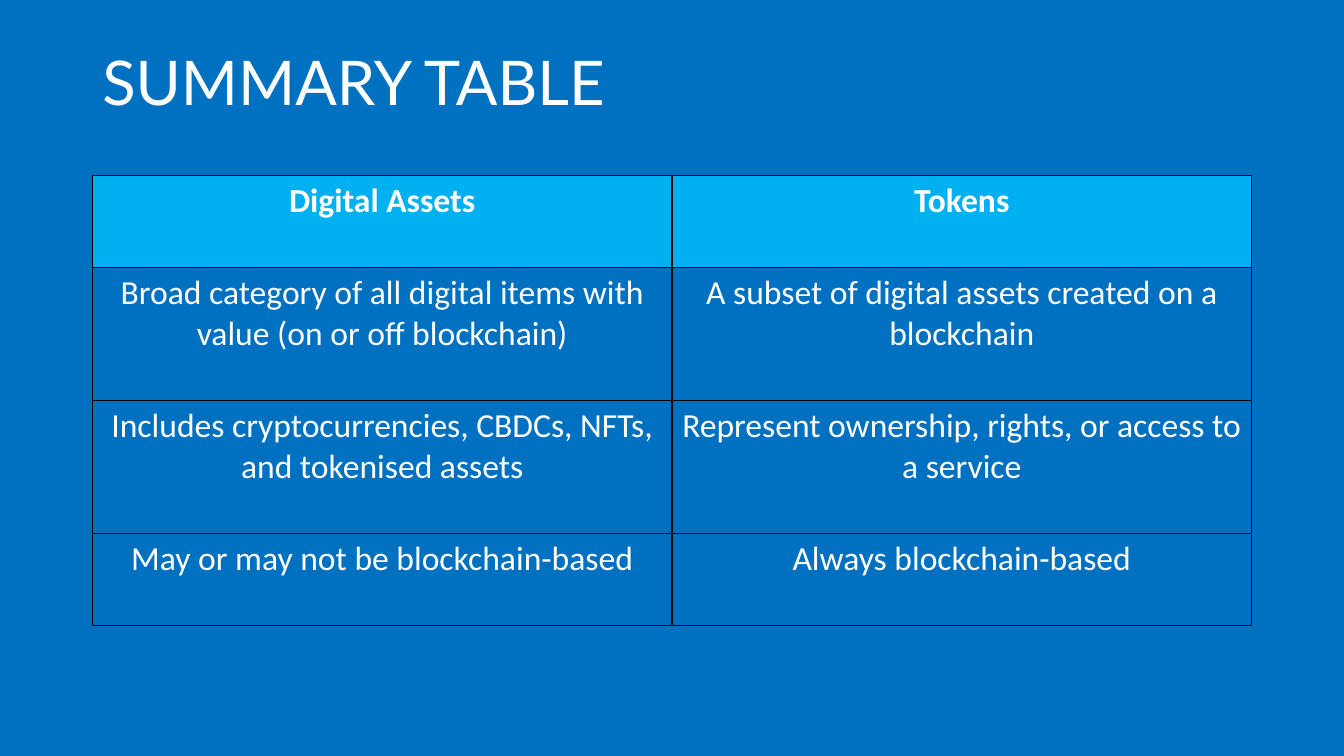
import pptx
import pptx.dml.color
import pptx.enum.text
import pptx.oxml
import pptx.oxml.ns
import pptx.util

Pt = pptx.util.Pt
ROWS = [
    ("Digital Assets", "Tokens"),
    ("Broad category of all digital items with value (on or off blockchain)",
     "A subset of digital assets created on a blockchain"),
    ("Includes cryptocurrencies, CBDCs, NFTs, and tokenised assets",
     "Represent ownership, rights, or access to a service"),
    ("May or may not be blockchain-based", "Always blockchain-based"),
]
ROW_HEIGHTS = [65.7, 95, 95, 65.7]
COLUMN_WIDTH = 414
LEFT = 66


def color(value):
    return pptx.dml.color.RGBColor.from_string(value)


def write(frame, text, *, font, size, bold=False, align="LEFT", anchor="TOP", spacing=1.0):
    frame.word_wrap = True
    frame.vertical_anchor = pptx.enum.text.MSO_ANCHOR[anchor]
    para = frame.paragraphs[0]
    para.alignment = pptx.enum.text.PP_ALIGN[align]
    para.line_spacing = spacing
    span = para.add_run()
    span.text = text
    span.font.name = font
    span.font.size = Pt(size)
    span.font.bold = bold
    span.font.color.rgb = color("FFFFFF")


# Slide and background
deck = pptx.Presentation()
deck.slide_width, deck.slide_height = Pt(960), Pt(540)
page = deck.slides.add_slide(deck.slide_layouts[6])
page.background.fill.solid()
page.background.fill.fore_color.rgb = color("0070C0")

# Title
box = page.shapes.add_textbox(Pt(LEFT), Pt(28.8), Pt(2 * COLUMN_WIDTH), Pt(64.8))
write(box.text_frame, "SUMMARY TABLE", font="Lato", size=44, anchor="MIDDLE", spacing=0.9)

# Table
table = page.shapes.add_table(
    len(ROWS), 2, Pt(LEFT), Pt(125.5), Pt(2 * COLUMN_WIDTH), Pt(sum(ROW_HEIGHTS))).table
for column in table.columns:
    column.width = Pt(COLUMN_WIDTH)

for row, (texts, height) in enumerate(zip(ROWS, ROW_HEIGHTS)):
    table.rows[row].height = Pt(height)
    for col, text in enumerate(texts):
        cell = table.cell(row, col)
        cell.margin_left = cell.margin_right = Pt(5)
        write(cell.text_frame, text, font="Calibri", size=24, bold=row == 0, align="CENTER")
        cell.vertical_anchor = pptx.enum.text.MSO_ANCHOR.TOP

        # Cell borders come before the fill in the XML
        for side in ("lnL", "lnR", "lnT", "lnB"):
            cell._tc.get_or_add_tcPr().append(pptx.oxml.parse_xml(
                f'<a:{side} {pptx.oxml.ns.nsdecls("a")} w="{Pt(1)}"><a:solidFill>'
                f'<a:srgbClr val="000000"/></a:solidFill></a:{side}>'))
        if row == 0:
            cell.fill.solid()
            cell.fill.fore_color.rgb = color("00B0F0")
        else:
            cell.fill.background()

deck.save("out.pptx")
